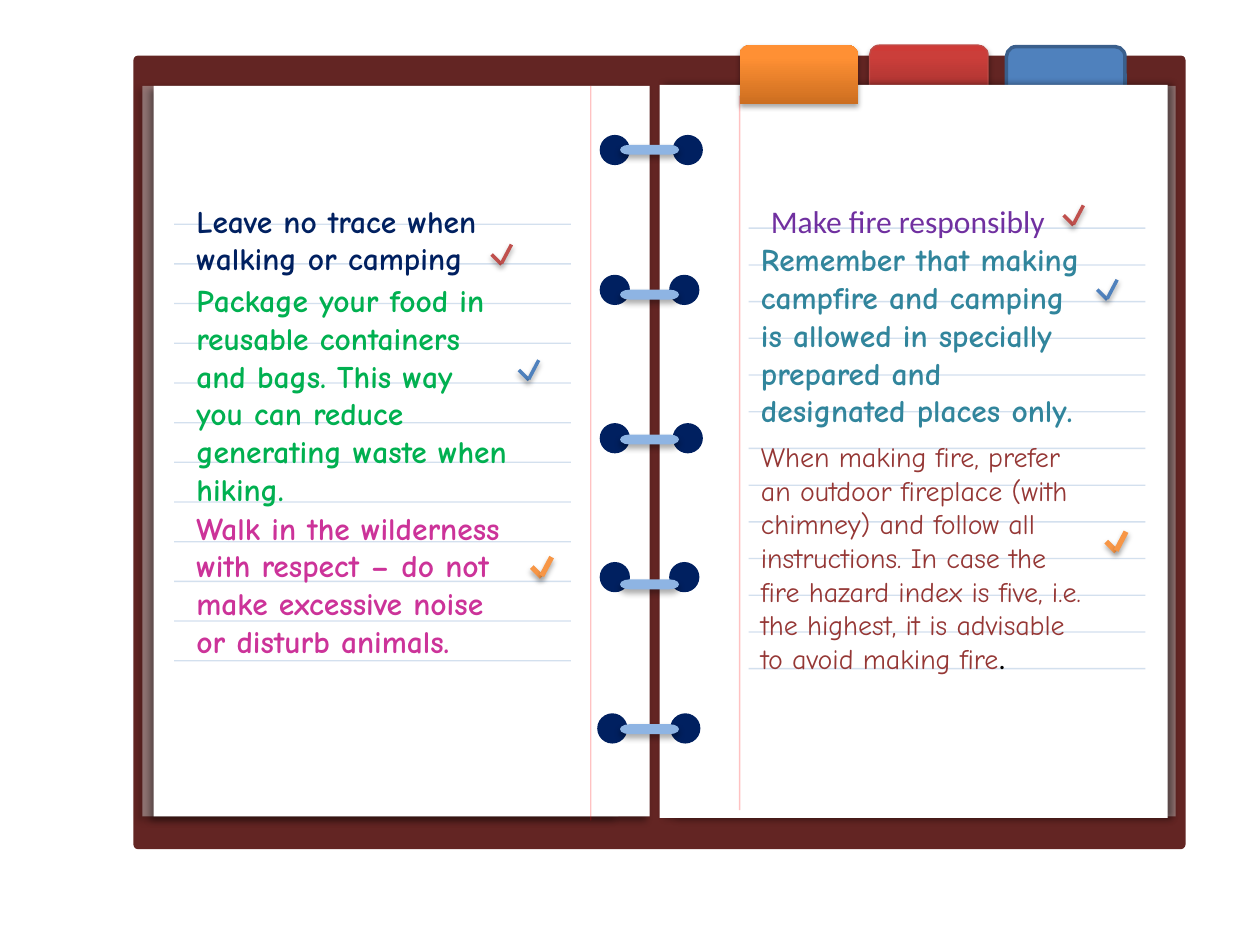
from lxml import etree
from pptx import Presentation
from pptx.dml.color import RGBColor
from pptx.enum.shapes import MSO_CONNECTOR as Link, MSO_SHAPE as Kind
from pptx.enum.text import MSO_AUTO_SIZE as AutoSize
from pptx.oxml import parse_xml
from pptx.oxml.ns import nsdecls, qn
from pptx.util import Cm, Pt

WHITE = RGBColor(0xFF, 0xFF, 0xFF)
BLACK = RGBColor(0, 0, 0)
COVER = RGBColor(0x63, 0x25, 0x23)
UNDERLAY = RGBColor(0xD9, 0xD9, 0xD9)
NAVY = RGBColor(0x00, 0x20, 0x60)
RING = RGBColor(0x8E, 0xB4, 0xE3)
MARGIN = RGBColor(0xFF, 0, 0)
RULE = RGBColor(0x4B, 0x7E, 0xBC)
GREEN = RGBColor(0x00, 0xB0, 0x50)
PINK = RGBColor(0xCC, 0x33, 0x99)
PURPLE = RGBColor(0x70, 0x30, 0xA0)
TEAL = RGBColor(0x31, 0x85, 0x9C)
BROWN = RGBColor(0x95, 0x37, 0x35)
RED = RGBColor(0xC0, 0x50, 0x4D)
BLUE = RGBColor(0x4F, 0x81, 0xBD)
ORANGE = RGBColor(0xF7, 0x96, 0x46)
RED_EDGE = RGBColor(0xBF, 0x4C, 0x48)
BLUE_EDGE = RGBColor(0x3A, 0x5F, 0x8C)
RED_BLEND = ((0, "9C2F2D"), (80, "CB3E3A"), (100, "CE3B37"))
ORANGE_BLEND = ((0, "CC6E20"), (80, "FF9034"), (100, "FF9136"))

# Shadows: opacity %, blur pt, distance pt, direction in degrees
SOFT = (35, 3.1, 1.8, 90)
RING_SHADOW = (32, 3.5, 2.2, 90)
PAGE_LEFT = (40, 4, 3, 135)
PAGE_RIGHT = (40, 4, 3, 0)
COMIC, PLAIN = "Comic Neue", "Calibri"


def set_shadow(part, shadow=None):
    """Replace the theme shadow with the given one, or with none."""
    props = part._element.spPr
    for old in props.findall(qn("a:effectLst")):
        props.remove(old)
    effects = etree.SubElement(props, qn("a:effectLst"))
    if shadow:
        opacity, blur, distance, angle = shadow
        outer = etree.SubElement(
            effects, qn("a:outerShdw"), blurRad=str(Pt(blur)), dist=str(Pt(distance)),
            dir=str(angle * 60000), rotWithShape="0")
        color = etree.SubElement(outer, qn("a:srgbClr"), val="000000")
        etree.SubElement(color, qn("a:alpha"), val=str(opacity * 1000))


def set_alpha(part, percent):
    for color in part._element.spPr.iter(qn("a:srgbClr")):
        etree.SubElement(color, qn("a:alpha"), val=str(percent * 1000))


def set_blend(shape, blend):
    """Fill a shape with an upward gradient."""
    stops = "".join(f'<a:gs pos="{pos * 1000}"><a:srgbClr val="{color}"/></a:gs>'
                    for pos, color in blend)
    gradient = parse_xml(f'<a:gradFill {nsdecls("a")}><a:gsLst>{stops}</a:gsLst>'
                         '<a:lin ang="16200000" scaled="0"/></a:gradFill>')
    solid = shape._element.spPr.find(qn("a:solidFill"))
    solid.getparent().replace(solid, gradient)


def add_shape(page, kind, box, color, shadow=None, edge=None, alpha=None):
    shape = page.shapes.add_shape(kind, *map(Cm, box))
    shape.fill.solid()
    shape.fill.fore_color.rgb = color
    if alpha:
        set_alpha(shape, alpha)
    if edge:
        shape.line.color.rgb, shape.line.width = edge
    else:
        shape.line.fill.background()
    set_shadow(shape, shadow)
    return shape


def add_line(parent, start, end, color, width=0.75, alpha=None, shadow=None):
    line = parent.shapes.add_connector(Link.STRAIGHT, *map(Cm, (*start, *end)))
    line.line.color.rgb = color
    line.line.width = Pt(width)
    if alpha:
        set_alpha(line, alpha)
    set_shadow(line, shadow)


def add_tick(page, x, y, color, width):
    group = page.shapes.add_group_shape()
    for start, end in (((0, 0.2), (0.2, 0.4)), ((0.4, 0), (0.2, 0.38))):
        add_line(group, (x + start[0], y + start[1]), (x + end[0], y + end[1]),
                 color, width, shadow=SOFT)


def add_note(page, box, spans, size, bold):
    note = page.shapes.add_textbox(*map(Cm, box))
    frame = note.text_frame
    frame.word_wrap = True
    frame.auto_size = AutoSize.SHAPE_TO_FIT_TEXT
    para = frame.paragraphs[0]
    for text, face, color in spans:
        span = para.add_run()
        span.text = text
        span.font.name, span.font.size, span.font.bold = face, Pt(size), bold
        span.font.color.rgb = color


def add_sheet(page, box, under, shadow, margin, rules, notes, ticks):
    """One ruled sheet; every part is placed from the sheet's top left corner."""
    left, top = box[:2]
    add_shape(page, Kind.RECTANGLE, under, UNDERLAY, PAGE_LEFT, alpha=45)
    add_shape(page, Kind.RECTANGLE, box, WHITE, shadow)
    # Margin and ruled lines
    x, start, end = margin
    add_line(page, (left + x, top + start), (left + x, top + end), MARGIN, alpha=23)
    x, first, step, count = rules
    for row in range(count):
        y = top + first + row * step
        add_line(page, (left + x, y), (left + x + 8, y), RULE, alpha=23)
    # Notes and their ticks
    for (x, y, width, height), spans, size, bold in notes:
        add_note(page, (left + x, top + y, width, height), spans, size, bold)
    for (x, y), (color, width) in zip(ticks, ((RED, 2), (BLUE, 2), (ORANGE, 3))):
        add_tick(page, left + x, top + y, color, width)


def add_tab(page, x, y, color, blend=None, shadow=None, edge=None):
    tab = add_shape(page, Kind.ROUND_2_SAME_RECTANGLE, (x, y, 2.39, 1.19),
                    color, shadow, edge)
    if blend:
        set_blend(tab, blend)


def add_binding(page, box):
    """Five rings, each a bar over two holes."""
    left, top = box
    holes = ((0.05, 1.52, 0), (0.05, 1.45, 2.82), (0.05, 1.52, 5.81),
             (0.05, 1.45, 8.61), (0, 1.47, 11.66))
    for row, (first, second, y) in enumerate(holes):
        for x in (first, second):
            add_shape(page, Kind.FLOWCHART_CONNECTOR, (left + x, top + y, 0.61, 0.61), NAVY)
        add_shape(page, Kind.FLOWCHART_TERMINATOR,
                  (left + 0.46, top + 0.2 + row * 2.92, 1.19, 0.2), RING, RING_SHADOW)


def add_notebook(page):
    # Cover and the tabs behind the sheets
    cover = add_shape(page, Kind.ROUNDED_RECTANGLE, (2.69, 1.12, 21.21, 16), COVER)
    cover.adjustments[0] = 0.006
    add_tab(page, 17.53, 0.91, RED, RED_BLEND, SOFT, (RED_EDGE, Pt(0.75)))
    add_tab(page, 20.29, 0.94, BLUE, edge=(BLUE_EDGE, Pt(2)))

    # Left sheet
    add_sheet(page, (3.1, 1.73, 10, 14.73), (2.87, 1.73, 9.6, 14.73), PAGE_LEFT,
              margin=(8.81, 0, 14.81), rules=(0.41, 2.79, 0.8, 12), notes=(
        ((0.61, 2.21, 7.19, 1.8),
         [("Leave no trace when walking or camping", COMIC, NAVY)], 18, True),
        ((0.61, 3.81, 6.81, 5.64),
         [("Package your food in reusable containers and bags. This way you can "
           "reduce generating waste when hiking.", COMIC, GREEN)], 18, True),
        ((0.61, 8.4, 6.81, 4.11),
         [("Walk in the wilderness with respect – do not make excessive noise or "
           "disturb animals.", COMIC, PINK)], 18, True),
    ), ticks=((6.81, 3.2), (7.36, 5.53), (7.62, 9.5)))

    # Right sheet
    add_sheet(page, (13.3, 1.71, 10.24, 14.78), (13.69, 1.73, 10.01, 14.73), PAGE_RIGHT,
              margin=(1.61, 0.22, 14.62), rules=(1.79, 2.89, 0.74, 13), notes=(
        ((1.99, 2.23, 7.39, 1.02),
         [("Make fire responsibly", PLAIN, PURPLE)], 18, False),
        ((1.79, 3.01, 7.19, 4.88),
         [("Remember that making campfire and camping is allowed in specially "
           "prepared and designated places only.", COMIC, TEAL)], 18, True),
        ((1.79, 7.03, 7.19, 5.05),
         [("When making fire, prefer an outdoor fireplace (with chimney) and follow "
           "all instructions. In case the fire hazard index is five, i.e. the highest, "
           "it is advisable to avoid making fire", COMIC, BROWN),
          (".", PLAIN, BLACK)], 16, False),
    ), ticks=((8.14, 2.43), (8.82, 3.93), (9, 9.01)))

    # Binding and the front tab
    add_binding(page, (12.04, 2.72))
    add_tab(page, 14.91, 0.91, ORANGE, ORANGE_BLEND, SOFT)


def main():
    deck = Presentation()
    deck.slide_width, deck.slide_height = Cm(25.4), Cm(19.05)
    add_notebook(deck.slides.add_slide(deck.slide_layouts[6]))
    deck.save("out.pptx")


if __name__ == "__main__":
    main()
